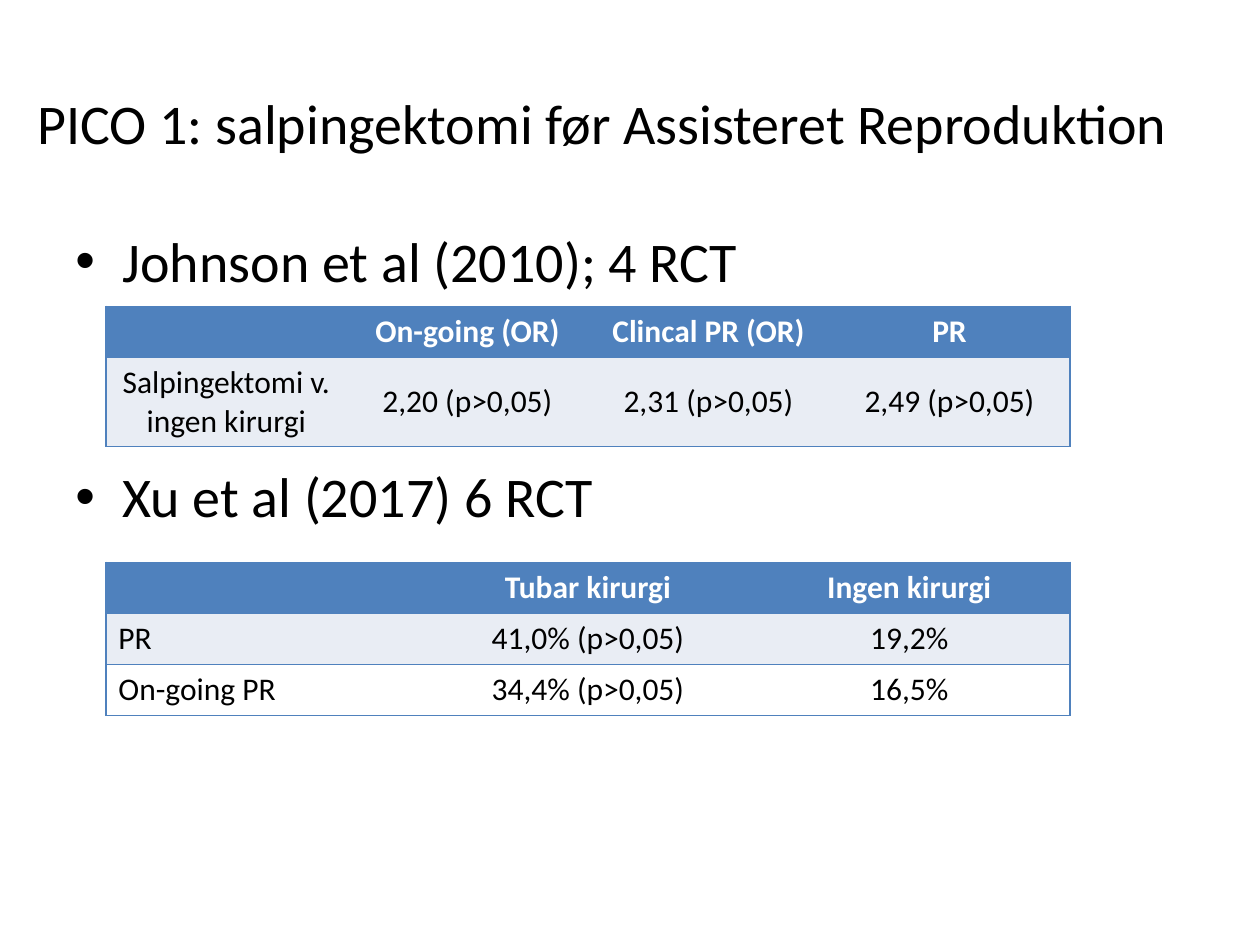
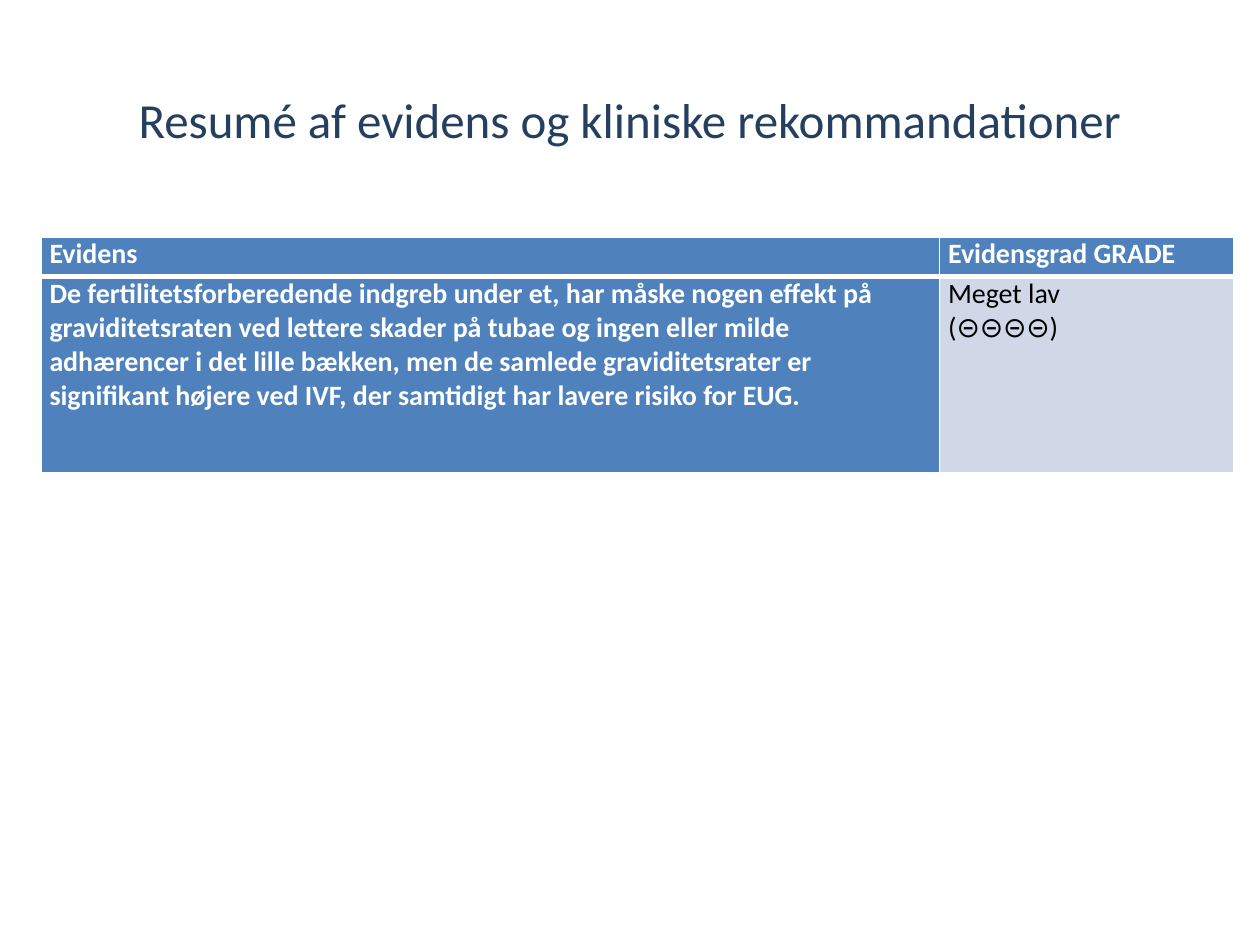
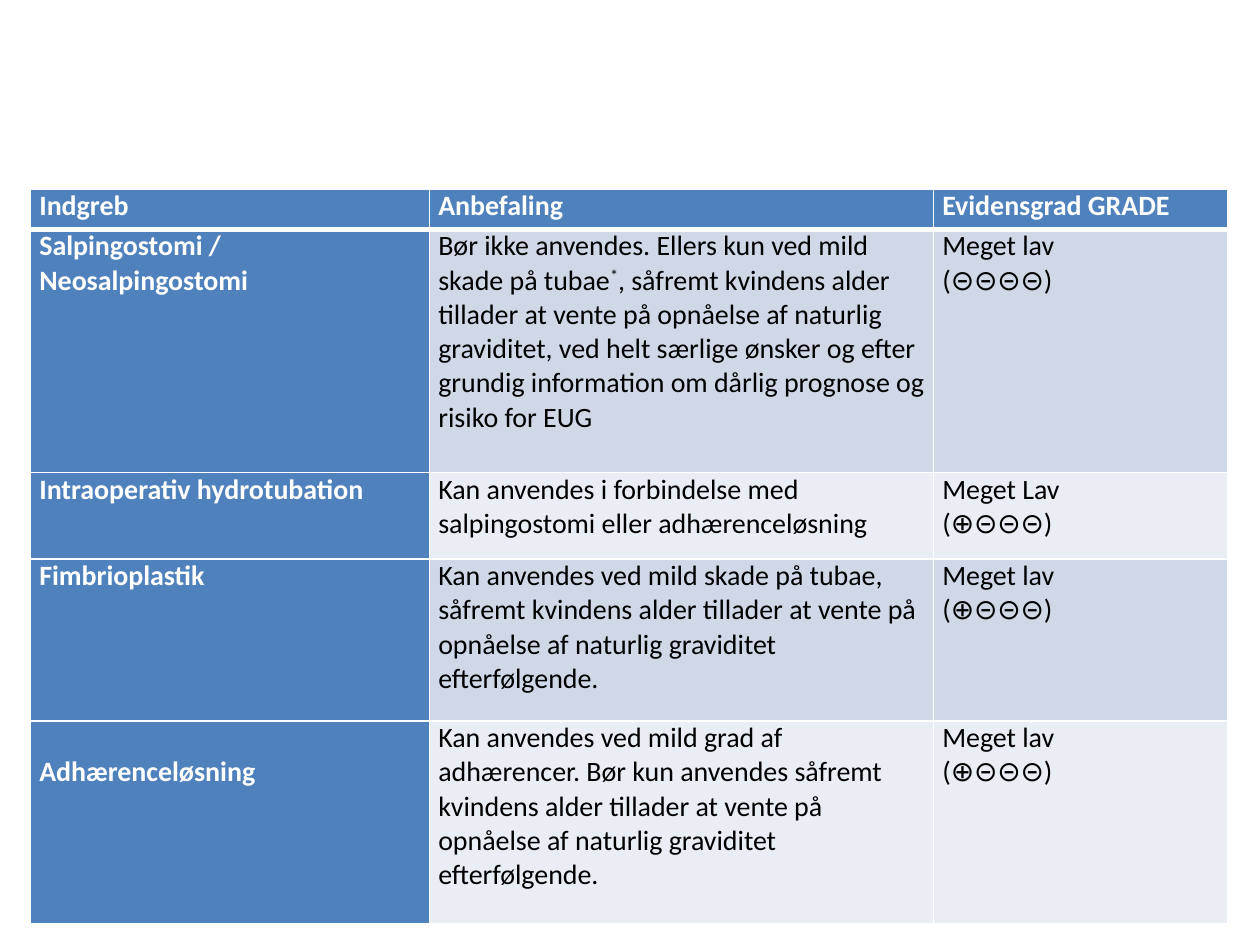
import dataclasses

import pptx
import pptx.dml.color
import pptx.enum.text
import pptx.oxml
import pptx.oxml.ns
import pptx.util

Pt = pptx.util.Pt
Align = pptx.enum.text.PP_ALIGN
Anchor = pptx.enum.text.MSO_ANCHOR


@dataclasses.dataclass(frozen=True)
class Theme:
    font: str = "Calibri"
    black: str = "000000"
    white: str = "FFFFFF"
    navy: str = "243F60"
    blue: str = "4F81BD"
    band_dark: str = "D0D8E8"
    band_light: str = "E9EDF4"
    heading: float = 32
    summary_heading: float = 28
    result_text: float = 18
    grade_text: float = 16
    line: float = 1
    header_line: float = 3


THEME = Theme()
TITLE_ONLY, BLANK = 5, 6

PICO_TITLE = "PICO 1: salpingektomi før Assisteret Reproduktion "
STUDIES = ["Johnson et al (2010); 4 RCT", "Xu et al (2017) 6 RCT"]
STUDY_GAP = 96
RESULT_LEFT, RESULT_WIDTH = 60.5, 551
JOHNSON_ROWS = [
    ["", "On-going (OR)", "Clincal PR (OR)", "PR"],
    ["Salpingektomi v.\ningen kirurgi", "2,20 (p>0,05)", "2,31 (p>0,05)", "2,49 (p>0,05)"],
]
XU_ROWS = [
    ["", "Tubar kirurgi", "Ingen kirurgi"],
    ["PR", "41,0% (p>0,05)", "19,2%"],
    ["On-going PR", "34,4% (p>0,05)", "16,5%"],
]

SUMMARY_TITLE = "Resumé af evidens og kliniske rekommandationer"
EVIDENCE_ROWS = [
    ["Evidens", "Evidensgrad GRADE"],
    [
        "De fertilitetsforberedende indgreb under et, har måske nogen effekt på "
        "graviditetsraten ved lettere skader på tubae og ingen eller milde adhærencer "
        "i det lille bækken, men de samlede graviditetsrater er signifikant højere ved "
        "IVF, der samtidigt har lavere risiko for EUG.",
        "Meget lav\n(⊝⊝⊝⊝)",
    ],
]
RECOMMENDATION_ROWS = [
    ["Indgreb", "Anbefaling", "Evidensgrad GRADE"],
    [
        "Salpingostomi / Neosalpingostomi",
        "Bør ikke anvendes. Ellers kun ved mild skade på tubae^*^, såfremt kvindens "
        "alder tillader at vente på opnåelse af naturlig graviditet, ved helt særlige "
        "ønsker og efter grundig information om dårlig prognose og risiko for EUG",
        "Meget lav\n(⊝⊝⊝⊝)",
    ],
    [
        "Intraoperativ hydrotubation",
        "Kan anvendes i forbindelse med salpingostomi eller adhærenceløsning",
        "Meget Lav\n(⊕⊝⊝⊝)",
    ],
    [
        "Fimbrioplastik",
        "Kan anvendes ved mild skade på tubae, såfremt kvindens alder tillader at vente "
        "på opnåelse af naturlig graviditet efterfølgende.",
        "Meget lav\n(⊕⊝⊝⊝)",
    ],
    [
        "Adhærenceløsning",
        "Kan anvendes ved mild grad af adhærencer. Bør kun anvendes såfremt kvindens "
        "alder tillader at vente på opnåelse af naturlig graviditet efterfølgende.",
        "Meget lav\n(⊕⊝⊝⊝)",
    ],
]
ADHESION_DROP = 19.5


def color(value):
    return pptx.dml.color.RGBColor.from_string(value)


def format_paragraph(paragraph, size, text_color, bold=False, alignment=Align.LEFT):
    paragraph.alignment = alignment
    font = paragraph.font
    font.name, font.size, font.bold = THEME.font, Pt(size), bold
    font.color.rgb = color(text_color)


def add_title(slide, text, box, size, text_color, alignment, anchor, margin_top):
    title = slide.shapes.title
    title.left, title.top, title.width, title.height = map(Pt, box)
    frame = title.text_frame
    frame.text = text
    frame.word_wrap = True
    frame.auto_size = pptx.enum.text.MSO_AUTO_SIZE.NONE
    frame.vertical_anchor = anchor
    frame.margin_top = Pt(margin_top)
    format_paragraph(frame.paragraphs[0], size, text_color, alignment=alignment)


def add_studies(slide):
    frame = slide.shapes.add_textbox(Pt(36), Pt(126), Pt(648), Pt(356)).text_frame
    frame.word_wrap = True
    frame.text = "\n".join(STUDIES)
    for index, paragraph in enumerate(frame.paragraphs):
        paragraph.space_before = Pt(STUDY_GAP * index)
        properties = paragraph._p.get_or_add_pPr()
        properties.set("marL", str(Pt(27)))
        properties.set("indent", str(-Pt(27)))
        for tag, name, value in (("buFont", "typeface", "Arial"), ("buChar", "char", "•")):
            bullet = pptx.oxml.parse_xml(f"<a:{tag} {pptx.oxml.ns.nsdecls('a')} {name}='{value}'/>")
            properties.append(bullet)
        format_paragraph(paragraph, THEME.heading, THEME.black)


def set_borders(cell, line_color, widths):
    properties = cell._tc.get_or_add_tcPr()
    for side, width in zip("LRTB", widths):
        paint = f"<a:solidFill><a:srgbClr val='{line_color}'/></a:solidFill>" if width else "<a:noFill/>"
        properties.append(pptx.oxml.parse_xml(
            f"<a:ln{side} {pptx.oxml.ns.nsdecls('a')} w='{Pt(width)}'>{paint}</a:ln{side}>"))


def fill_cell(cell, fill, text):
    cell.fill.solid()
    cell.fill.fore_color.rgb = color(fill)
    frame = cell.text_frame
    for index, line in enumerate(text.split("\n")):
        paragraph = frame.add_paragraph() if index else frame.paragraphs[0]
        for part_index, part in enumerate(line.split("^")):
            run = paragraph.add_run()
            run.text = part
            if part_index % 2:
                run._r.get_or_add_rPr().set("baseline", "30000")


def add_table(slide, rows, left, top, widths, heights, first_column):
    shape = slide.shapes.add_table(len(rows), len(widths), Pt(left), Pt(top),
                                   Pt(sum(widths)), Pt(sum(heights)))
    table = shape.table
    table.first_col, table.horz_banding = first_column, False
    for column, width in zip(table.columns, widths):
        column.width = Pt(width)
    for row, height in zip(table.rows, heights):
        row.height = Pt(height)
    return table


def add_result_table(slide, rows, top, heights, label_alignment):
    count = len(rows[0])
    table = add_table(slide, rows, RESULT_LEFT, top, [RESULT_WIDTH / count] * count, heights, False)
    for row_index, row in enumerate(rows):
        header = row_index == 0
        fill = THEME.blue if header else (THEME.white, THEME.band_light)[row_index % 2]
        for column_index, text in enumerate(row):
            cell = table.cell(row_index, column_index)
            cell.vertical_anchor = Anchor.MIDDLE
            set_borders(cell, THEME.blue, (
                THEME.line * (column_index == 0), THEME.line * (column_index == count - 1),
                THEME.line, THEME.line))
            fill_cell(cell, fill, text)
            label = column_index == 0 and not header
            for paragraph in cell.text_frame.paragraphs:
                format_paragraph(paragraph, THEME.result_text, THEME.white if header else THEME.black,
                                 header, label_alignment if label else Align.CENTER)


def add_grade_table(slide, rows, left, top, widths, heights):
    table = add_table(slide, rows, left, top, widths, heights, True)
    for row_index, row in enumerate(rows):
        band = (THEME.band_light, THEME.band_dark)[row_index % 2]
        for column_index, text in enumerate(row):
            cell = table.cell(row_index, column_index)
            strong = row_index == 0 or column_index == 0
            justified = row_index == 0 or column_index == len(row) - 1
            cell.margin_left = cell.margin_right = Pt(5)
            cell.margin_top = cell.margin_bottom = 0
            set_borders(cell, THEME.white, (
                THEME.line, THEME.line,
                THEME.header_line if row_index == 1 else THEME.line,
                THEME.header_line if row_index == 0 else THEME.line))
            fill_cell(cell, THEME.blue if strong else band, text)
            for paragraph in cell.text_frame.paragraphs:
                format_paragraph(paragraph, THEME.grade_text, THEME.white if strong else THEME.black,
                                 strong, Align.JUSTIFY if justified else Align.LEFT)
    return table


def main():
    presentation = pptx.Presentation()
    presentation.slide_width, presentation.slide_height = Pt(720), Pt(540)

    def add_slide(layout):
        return presentation.slides.add_slide(presentation.slide_layouts[layout])

    pico = add_slide(TITLE_ONLY)
    add_title(pico, PICO_TITLE, (12, 21.5, 672, 96.5), THEME.heading, THEME.black,
              Align.CENTER, Anchor.MIDDLE, 3.6)
    add_studies(pico)
    add_result_table(pico, JOHNSON_ROWS, 175, [29.2, 51], Align.CENTER)
    add_result_table(pico, XU_ROWS, 321.3, [29.2] * 3, Align.LEFT)

    summary = add_slide(TITLE_ONLY)
    add_title(summary, SUMMARY_TITLE, (72, 49, 632, 70), THEME.summary_heading, THEME.navy,
              Align.LEFT, Anchor.TOP, 2)
    add_grade_table(summary, EVIDENCE_ROWS, 23.3, 135.5, [513.5, 168], [22.5, 112])

    recommendations = add_slide(BLANK)
    table = add_grade_table(recommendations, RECOMMENDATION_ROWS, 17.5, 108,
                            [228, 288, 168], [23, 139, 49.5, 92.5, 116])
    table.cell(len(RECOMMENDATION_ROWS) - 1, 0).margin_top = Pt(ADHESION_DROP)

    presentation.save("out.pptx")


if __name__ == "__main__":
    main()
